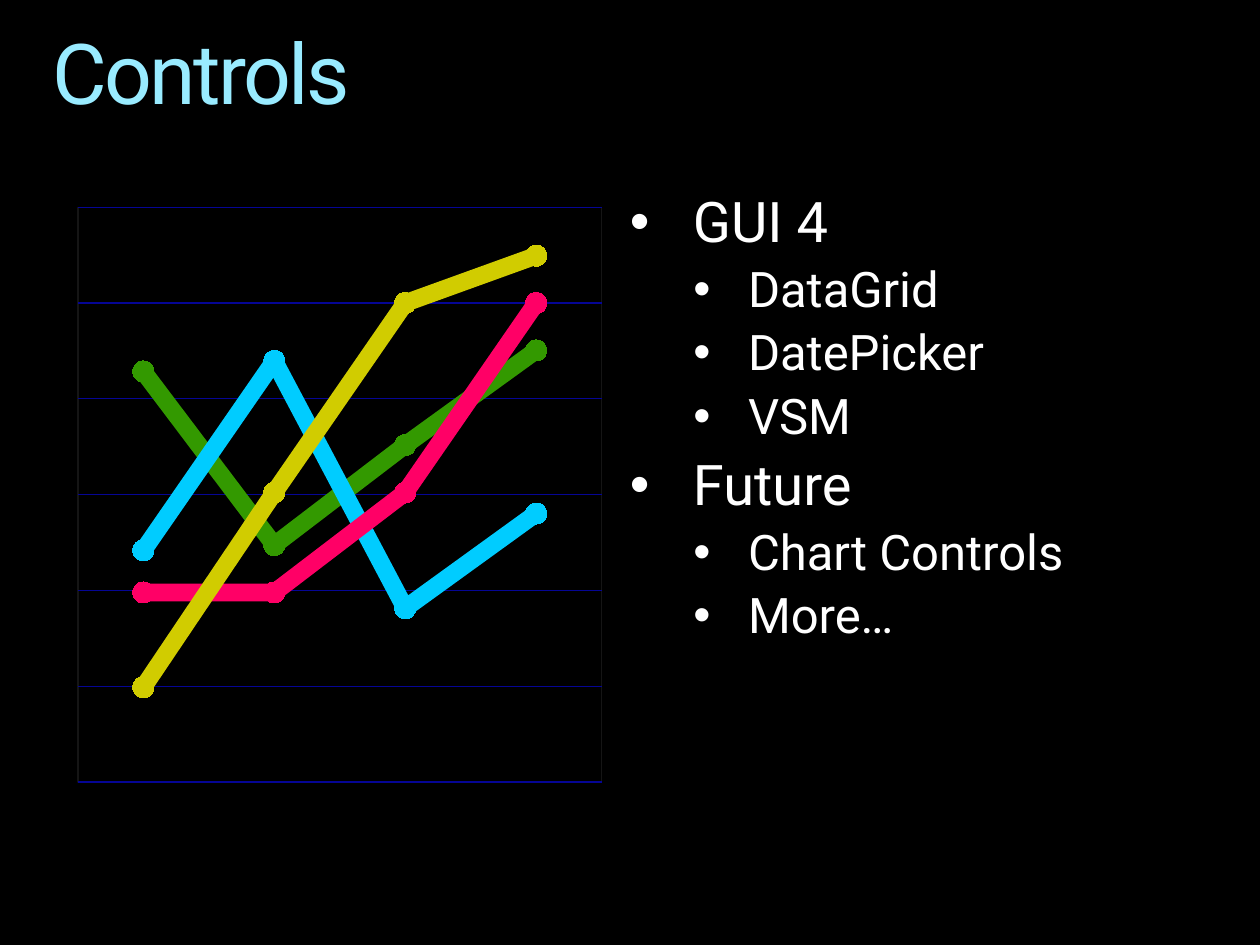
import pptx
import pptx.chart.data
import pptx.dml.color
import pptx.enum.chart
import pptx.enum.dml
import pptx.enum.text
import pptx.oxml
import pptx.oxml.ns
import pptx.util

Cm, Pt, RGB = pptx.util.Cm, pptx.util.Pt, pptx.dml.color.RGBColor
FONT = "Roboto"
BLACK = RGB(0x00, 0x00, 0x00)
WHITE = RGB(0xFF, 0xFF, 0xFF)
ICE = RGB(0x99, 0xEB, 0xFF)
NAVY = RGB(0x05, 0x05, 0x95)
GREEN = RGB(0x33, 0x99, 0x00)
CYAN = RGB(0x00, 0xCC, 0xFF)
PINK = RGB(0xFF, 0x00, 0x66)
GOLD = RGB(0xD1, 0xCC, 0x00)

LINES = [
    ("Series 1", (78, 45, 64, 82), GREEN),
    ("Series 2", (44, 80, 33, 51), CYAN),
    ("Series 3", (36, 36, 55, 91), PINK),
    ("Series 4", (18, 55, 91, 100), GOLD),
]
TOPICS = [
    ("GUI 4", ["DataGrid", "DatePicker", "VSM"]),
    ("Future", ["Chart Controls", "More…"]),
]
# Left margin, hanging indent, text size and space before for each level
LEVELS = [(Cm(1.27), Cm(-1.27), Pt(32), Pt(7)),
          (Cm(2.38), Cm(-1.1), Pt(28), Pt(6))]
STEP = 18.2

PLOT = """<c:layout {ns}><c:manualLayout>
<c:layoutTarget val="inner"/><c:xMode val="edge"/><c:yMode val="edge"/>
<c:x val="0.02"/><c:y val="0.02"/><c:w val="0.96"/><c:h val="0.96"/>
</c:manualLayout></c:layout>"""
WALL = """<c:spPr {ns}><a:gradFill><a:gsLst>
<a:gs pos="0"><a:srgbClr val="000000"><a:alpha val="0"/></a:srgbClr></a:gs>
<a:gs pos="50000"><a:srgbClr val="000000"><a:alpha val="9000"/></a:srgbClr></a:gs>
<a:gs pos="100000"><a:srgbClr val="000000"><a:alpha val="85000"/></a:srgbClr></a:gs>
</a:gsLst><a:lin ang="5400000" scaled="0"/></a:gradFill>
<a:ln w="9525"><a:solidFill><a:srgbClr val="151515"/></a:solidFill></a:ln></c:spPr>"""


def make(xml):
    """Turn chart XML into an element."""
    return pptx.oxml.parse_xml(xml.format(ns=pptx.oxml.ns.nsdecls("c", "a")))


def style(font, size, color):
    font.name, font.size = FONT, size
    font.color.rgb = color


def bare(frame):
    """Wrap the text from the top of a frame without margins."""
    frame.margin_left = frame.margin_right = 0
    frame.margin_top = frame.margin_bottom = 0
    frame.word_wrap = True
    frame.vertical_anchor = pptx.enum.text.MSO_ANCHOR.TOP
    frame.auto_size = pptx.enum.text.MSO_AUTO_SIZE.SHAPE_TO_FIT_TEXT


def add_title(slide, left, top, width, height):
    title = slide.shapes.title
    title.left, title.top, title.width, title.height = left, top, width, height
    bare(title.text_frame)
    title.text_frame.text = "Controls"
    para = title.text_frame.paragraphs[0]
    para.alignment = pptx.enum.text.PP_ALIGN.LEFT
    para.line_spacing = 0.9
    run = para.runs[0]
    style(run.font, Pt(48), ICE)
    run.font._element.set("spc", "-150")


def add_list(slide, left, top, width, height):
    frame = slide.shapes.add_textbox(left, top, width, height).text_frame
    bare(frame)
    items = [item for head, subs in TOPICS
             for item in [(head, 0)] + [(sub, 1) for sub in subs]]
    for i, (text, level) in enumerate(items):
        para = frame.add_paragraph() if i else frame.paragraphs[0]
        margin, indent, size, gap = LEVELS[level]
        para.text, para.level = text, level
        props = para._p.get_or_add_pPr()
        props.set("marL", str(margin))
        props.set("indent", str(indent))
        for tag, key, value in (("buFont", "typeface", "Arial"),
                                ("buChar", "char", "•")):
            bullet = pptx.oxml.parse_xml(
                f'<a:{tag} {pptx.oxml.ns.nsdecls("a")} {key}="{value}"/>')
            props.append(bullet)
        para.line_spacing = 0.9
        para.space_before = gap if i else Pt(0)
        style(para.runs[0].font, size, WHITE)


def paint(series, color):
    """Give a series a thick line with round marks of one colour."""
    series.smooth = False
    series.format.line.width = Pt(10)
    series.format.line.color.rgb = color
    mark = series.marker
    mark.style = pptx.enum.chart.XL_MARKER_STYLE.CIRCLE
    mark.size = 12
    mark.format.fill.solid()
    mark.format.fill.fore_color.rgb = color
    mark.format.line.fill.background()


def add_graph(slide, left, top, width, height):
    data = pptx.chart.data.CategoryChartData()
    data.categories = ["1", "2", "3", "4"]
    for name, values, color in LINES:
        data.add_series(name, values)
    kind = pptx.enum.chart.XL_CHART_TYPE.LINE_MARKERS
    chart = slide.shapes.add_chart(kind, left, top, width, height, data).chart
    chart.has_legend = chart.has_title = False
    style(chart.font, Pt(18), WHITE)
    plot = chart.plots[0]
    plot.vary_by_categories = False
    for series, (name, values, color) in zip(plot.series, LINES):
        paint(series, color)

    chart.category_axis.visible = False
    axis = chart.value_axis
    axis.visible = False
    axis.minimum_scale, axis.maximum_scale = 0, 6 * STEP
    axis.major_unit = STEP
    axis.has_major_gridlines = True
    grid = axis.major_gridlines.format.line
    grid.color.rgb, grid.width = NAVY, Pt(0.75)

    area = chart._chartSpace.chart.plotArea
    for old in area.findall(pptx.oxml.ns.qn("c:layout")):
        area.remove(old)
    area.insert(0, make(PLOT))
    area.append(make(WALL))


def main():
    deck = pptx.Presentation()
    deck.slide_width, deck.slide_height = Cm(25.4), Cm(19.05)
    slide = deck.slides.add_slide(deck.slide_layouts.get_by_name("Title Only"))
    slide.background.fill.solid()
    slide.background.fill.fore_color.rgb = BLACK
    add_title(slide, Cm(1.06), Cm(0.64), Cm(23.28), Cm(1.85))
    add_list(slide, Cm(12.7), Cm(3.91), Cm(11.64), Cm(6.15))
    add_graph(slide, Cm(1.35), Cm(3.94), Cm(11), Cm(12.07))
    deck.save("out.pptx")


if __name__ == "__main__":
    main()
